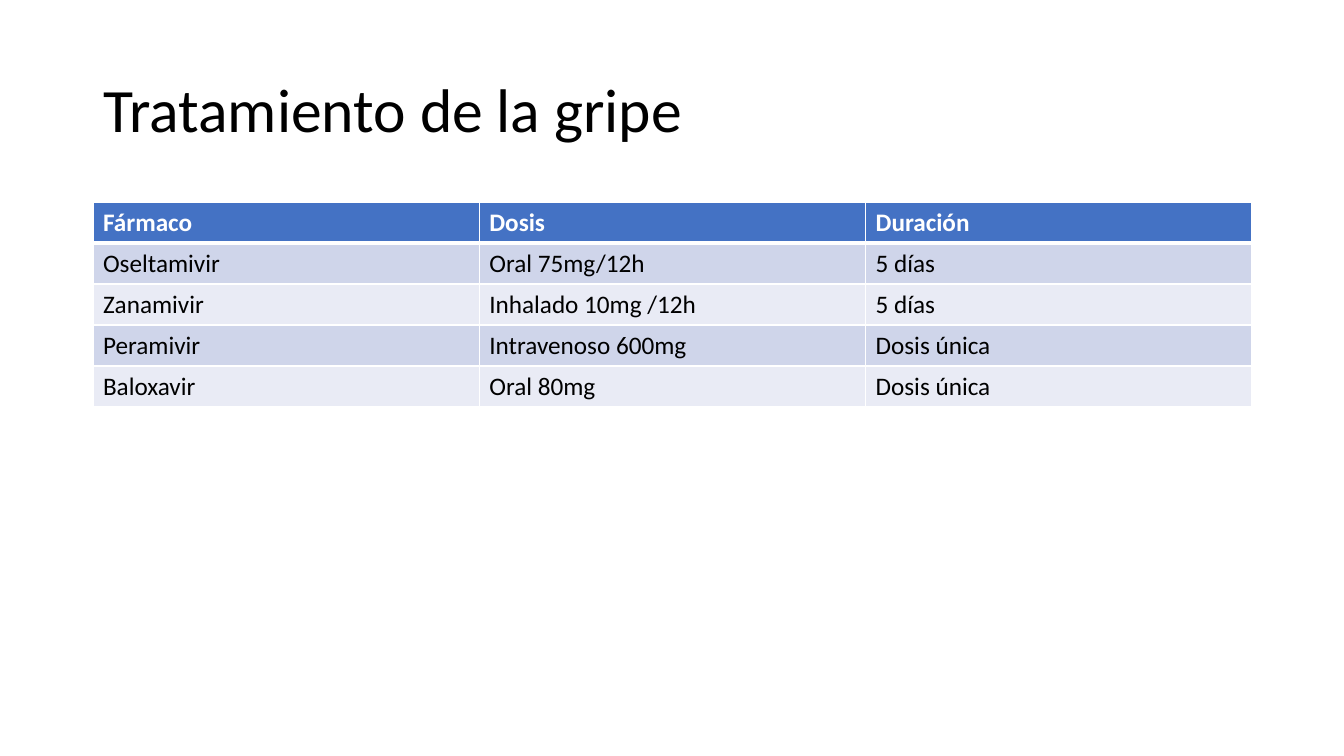
from lxml import etree
from pptx import Presentation
from pptx.dml.color import RGBColor
from pptx.enum.text import MSO_ANCHOR, MSO_AUTO_SIZE, PP_ALIGN
from pptx.oxml.ns import qn
from pptx.util import Emu, Pt

LEFT = PP_ALIGN.LEFT
MIDDLE = MSO_ANCHOR.MIDDLE
NO_FIT = MSO_AUTO_SIZE.NONE
EMU_PER_PX = 914400 / 100.8
FONT = "Calibri"
WHITE, BLACK = "FFFFFF", "000000"
HEADER_FILL = "4472C4"
BAND_FILLS = ("CFD5EA", "E9EBF5")
TREATMENTS = [
    ("Fármaco", "Dosis", "Duración"),
    ("Oseltamivir", "Oral 75mg/12h", "5 días"),
    ("Zanamivir", "Inhalado 10mg /12h", "5 días"),
    ("Peramivir", "Intravenoso 600mg", "Dosis única"),
    ("Baloxavir", "Oral 80mg", "Dosis única"),
]


def px(n):
    """Turn pixels into EMU."""
    return Emu(round(n * EMU_PER_PX))


def rgb(value):
    """Turn a hex string into a colour."""
    return RGBColor.from_string(value)


def write(tf, text, size=18, color=BLACK, bold=False, spacing=None):
    """Write one formatted paragraph into a text frame."""
    p = tf.paragraphs[0]
    p.alignment = LEFT
    p.line_spacing = spacing
    r = p.add_run()
    r.text = text
    r.font.name = FONT
    r.font.size = Pt(size)
    r.font.bold = bold
    r.font.color.rgb = rgb(color)


def add_border(cell, side, width):
    """Draw a white border on one side of a cell."""
    ln = etree.SubElement(cell._tc.get_or_add_tcPr(), qn(f"a:ln{side}"), w=str(Pt(width)))
    fill = etree.SubElement(ln, qn("a:solidFill"))
    etree.SubElement(fill, qn("a:srgbClr"), val=WHITE)


def set_title(s, text, x, y, w, h):
    """Place and fill the title placeholder."""
    sp = s.shapes.title
    sp.left, sp.top, sp.width, sp.height = px(x), px(y), px(w), px(h)
    tf = sp.text_frame
    tf.auto_size = NO_FIT
    tf.vertical_anchor = MIDDLE
    tf.word_wrap = True
    write(tf, text, size=44, spacing=0.9)


def add_banded_table(s, rows, x, y, w, row_h):
    """Add a table with a header row and alternating row fills."""
    table = s.shapes.add_table(
        len(rows), len(rows[0]), px(x), px(y), px(w), px(row_h * len(rows))
    ).table
    for col in table.columns:
        col.width = px(w / len(rows[0]))
    for i, values in enumerate(rows):
        table.rows[i].height = px(row_h)
        header = i == 0
        fill = HEADER_FILL if header else BAND_FILLS[(i - 1) % 2]
        for j, text in enumerate(values):
            cell = table.cell(i, j)
            for side in "LRTB":
                thick = (header and side == "B") or (i == 1 and side == "T")
                add_border(cell, side, 3 if thick else 1)
            cell.fill.solid()
            cell.fill.fore_color.rgb = rgb(fill)
            write(cell.text_frame, text, color=WHITE if header else BLACK, bold=header)


def main():
    """Build the slide and save it."""
    prs = Presentation()
    prs.slide_width, prs.slide_height = px(1344), px(756)
    s = prs.slides.add_slide(prs.slide_layouts[5])
    set_title(s, "Tratamiento de la gripe", 93, 40, 1159, 146)
    add_banded_table(s, TREATMENTS, 93, 202, 1159, 41)
    prs.save("out.pptx")


if __name__ == "__main__":
    main()
